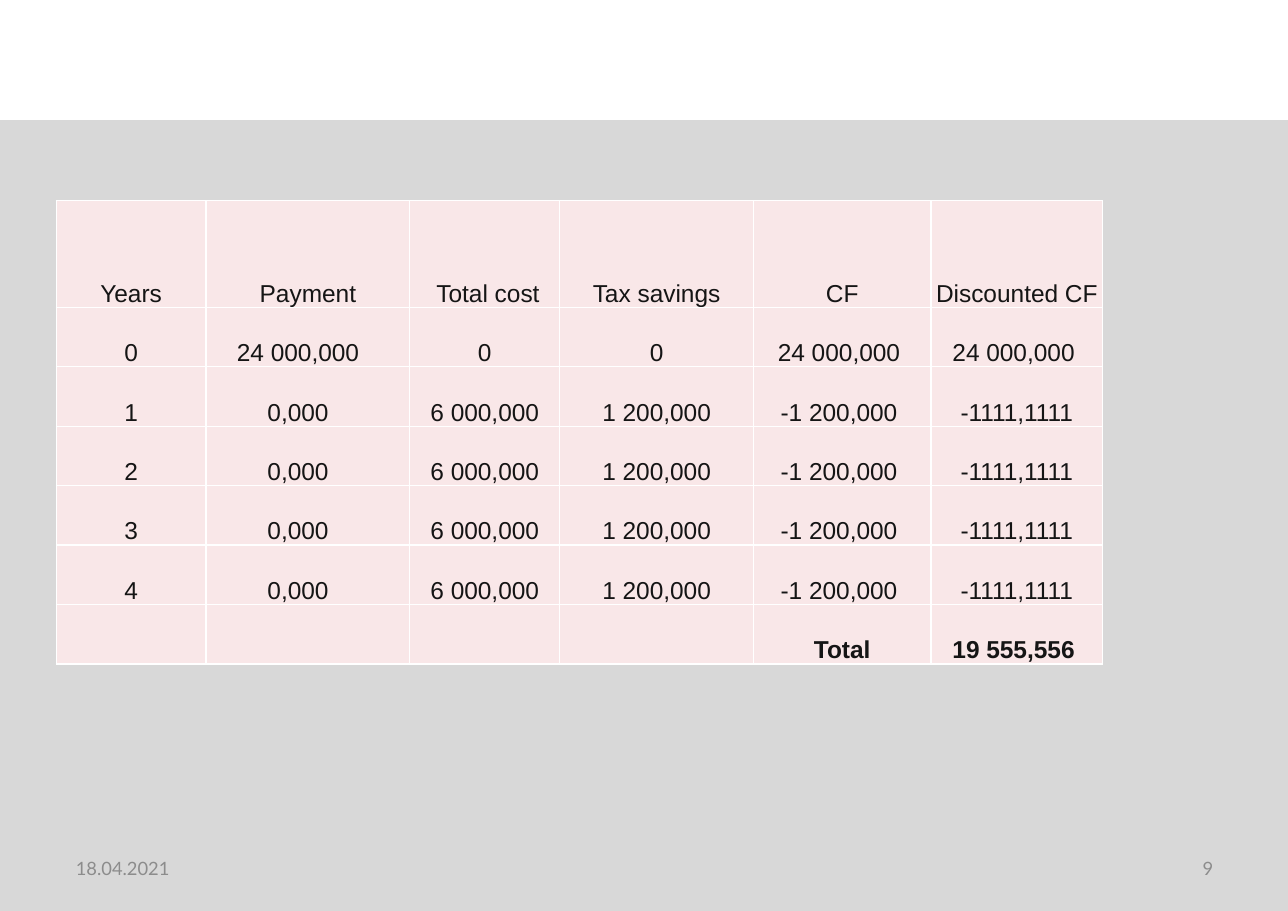
from lxml import etree
from pptx import Presentation
from pptx.dml.color import RGBColor
from pptx.enum.shapes import MSO_SHAPE
from pptx.enum.text import MSO_ANCHOR, PP_ALIGN
from pptx.oxml.ns import qn
from pptx.util import Inches, Pt

COLORS = {
    "panel": "D8D8D8",
    "cell": "F9E7E8",
    "border": "FFFFFF",
    "text": "151515",
    "footer": "8C8C8C",
}
WIDTH, HEIGHT = 11.69, 8.27
COLUMN_WIDTHS = [1.36, 1.85, 1.36, 1.76, 1.61, 1.56]
HEADER_HEIGHT, ROW_HEIGHT = 0.97, 0.54
HEADINGS = ["Years", "Payment", "Total cost", "Tax savings", "CF", "Discounted CF"]
YEARLY = ["0,000", "6 000,000", "1 200,000", "-1 200,000", "-1111,1111"]
ROWS = [
    HEADINGS,
    ["0", "24 000,000", "0", "0", "24 000,000", "24 000,000"],
    *[[str(year), *YEARLY] for year in range(1, 5)],
    ["", "", "", "", "Total", "19 555,556"],
]
EDGE, SPACE = 0.01, 0.06
LEFT_SPACES = {(0, 2): 1}
RIGHT_SPACES = {(row, 1): 3 for row in range(1, 6)}
RIGHT_SPACES |= {(row, 4): 1 for row in range(1, 6)}
RIGHT_SPACES |= {(1, 5): 1, (6, 5): 1}


def color(name):
    return RGBColor.from_string(COLORS[name])


def format_para(para, align, font_name, size, color_name, bold=False):
    para.alignment = align
    para.font.name = font_name
    para.font.size = Pt(size)
    para.font.bold = bold
    para.font.color.rgb = color(color_name)


def add_panel(page, left, top, width, height):
    panel = page.shapes.add_shape(
        MSO_SHAPE.RECTANGLE, Inches(left), Inches(top), Inches(width), Inches(height)
    )
    panel.shadow.inherit = False
    panel.fill.solid()
    panel.fill.fore_color.rgb = color("panel")
    panel.line.fill.background()


def add_borders(cell):
    properties = cell._tc.get_or_add_tcPr()
    for position, side in enumerate(("a:lnL", "a:lnR", "a:lnT", "a:lnB")):
        line = etree.Element(qn(side), w=str(Pt(1)))
        fill = etree.SubElement(line, qn("a:solidFill"))
        etree.SubElement(fill, qn("a:srgbClr"), val=COLORS["border"])
        properties.insert(position, line)


def fill_cell(cell, text, left_spaces, right_spaces, bold):
    cell.text = text
    cell.vertical_anchor = MSO_ANCHOR.BOTTOM
    cell.margin_left = Inches(EDGE + left_spaces * SPACE)
    cell.margin_right = Inches(EDGE + right_spaces * SPACE)
    cell.margin_top = Inches(EDGE)
    cell.margin_bottom = 0
    cell.fill.solid()
    cell.fill.fore_color.rgb = color("cell")
    add_borders(cell)
    para = cell.text_frame.paragraphs[0]
    format_para(para, PP_ALIGN.CENTER, "Arial", 16, "text", bold)


def add_cash_flow_table(page, left, top, width, height):
    table = page.shapes.add_table(
        len(ROWS), len(HEADINGS),
        Inches(left), Inches(top), Inches(width), Inches(height),
    ).table
    table.first_row = False
    table.horz_banding = False
    for column, column_width in zip(table.columns, COLUMN_WIDTHS):
        column.width = Inches(column_width)
    for index, row in enumerate(table.rows):
        row.height = Inches(ROW_HEIGHT if index else HEADER_HEIGHT)
    for row, values in enumerate(ROWS):
        for column, text in enumerate(values):
            key = row, column
            fill_cell(
                table.cell(row, column), text,
                LEFT_SPACES.get(key, 0), RIGHT_SPACES.get(key, 0),
                row == len(ROWS) - 1,
            )


def add_footer(page, left, top, width, height):
    box_width = 2.73
    entries = [
        ("18.04.2021", left, PP_ALIGN.LEFT),
        ("9", left + width - box_width, PP_ALIGN.RIGHT),
    ]
    for text, box_left, align in entries:
        box = page.shapes.add_textbox(
            Inches(box_left), Inches(top), Inches(box_width), Inches(height)
        )
        frame = box.text_frame
        frame.word_wrap = True
        frame.vertical_anchor = MSO_ANCHOR.MIDDLE
        frame.text = text
        format_para(frame.paragraphs[0], align, "Lato", 12, "footer")


def main():
    deck = Presentation()
    deck.slide_width = Inches(WIDTH)
    deck.slide_height = Inches(HEIGHT)
    page = deck.slides.add_slide(deck.slide_layouts[6])
    add_panel(page, 0, 1.09, WIDTH, HEIGHT - 1.09)
    add_cash_flow_table(page, 0.51, 1.82, 9.5, 4.21)
    add_footer(page, 0.59, 7.66, 10.52, 0.44)
    deck.save("out.pptx")


if __name__ == "__main__":
    main()
